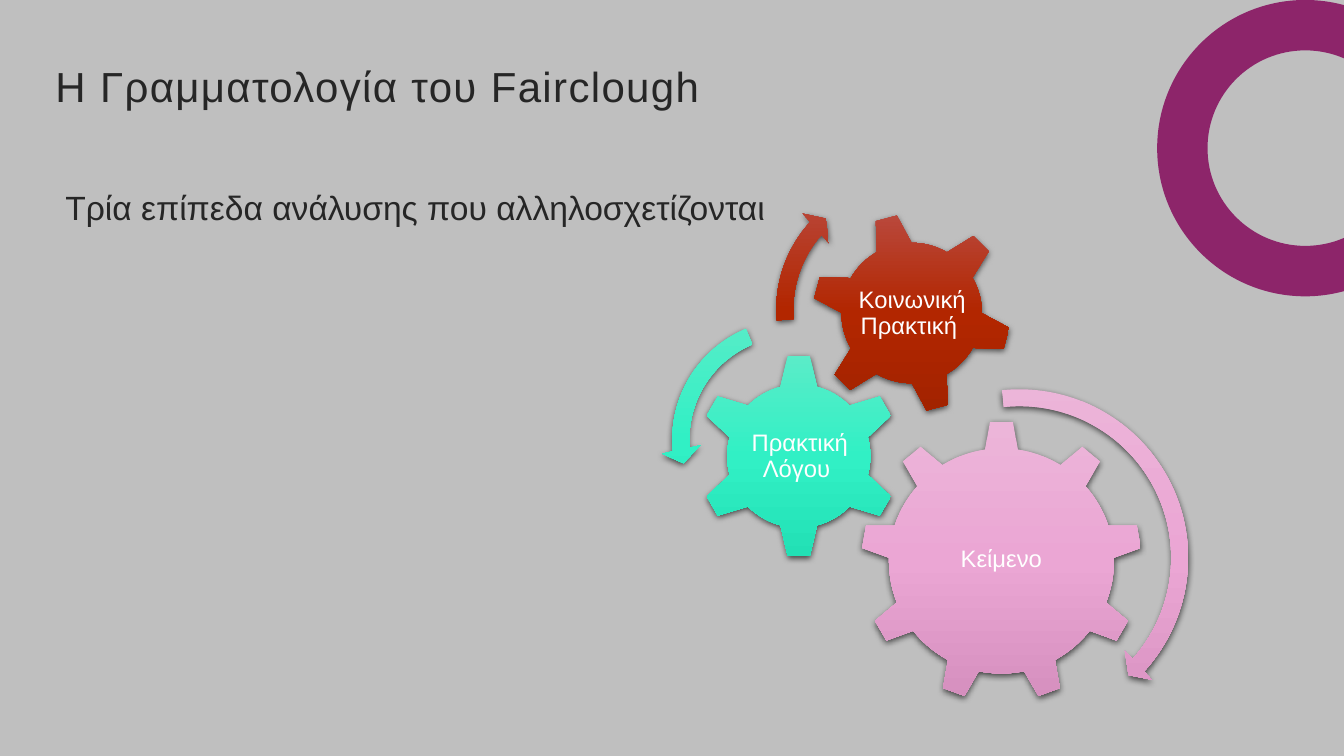
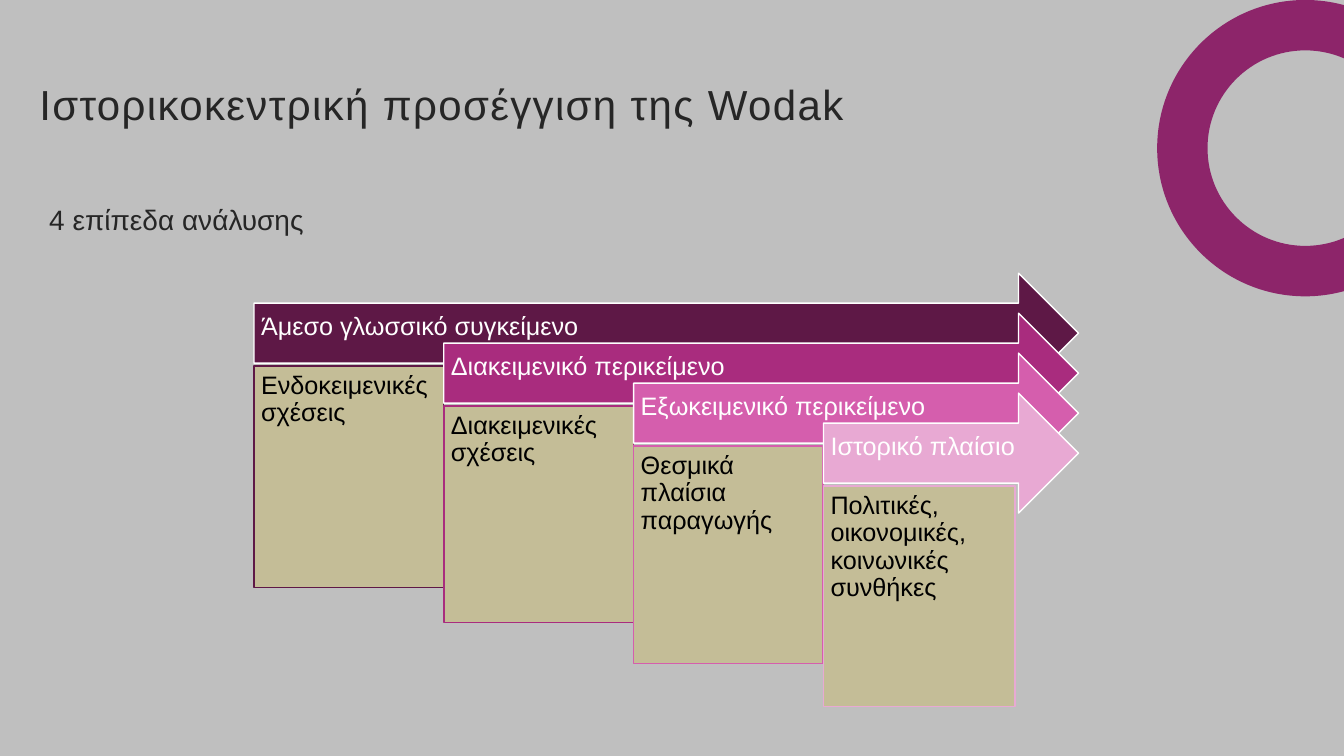
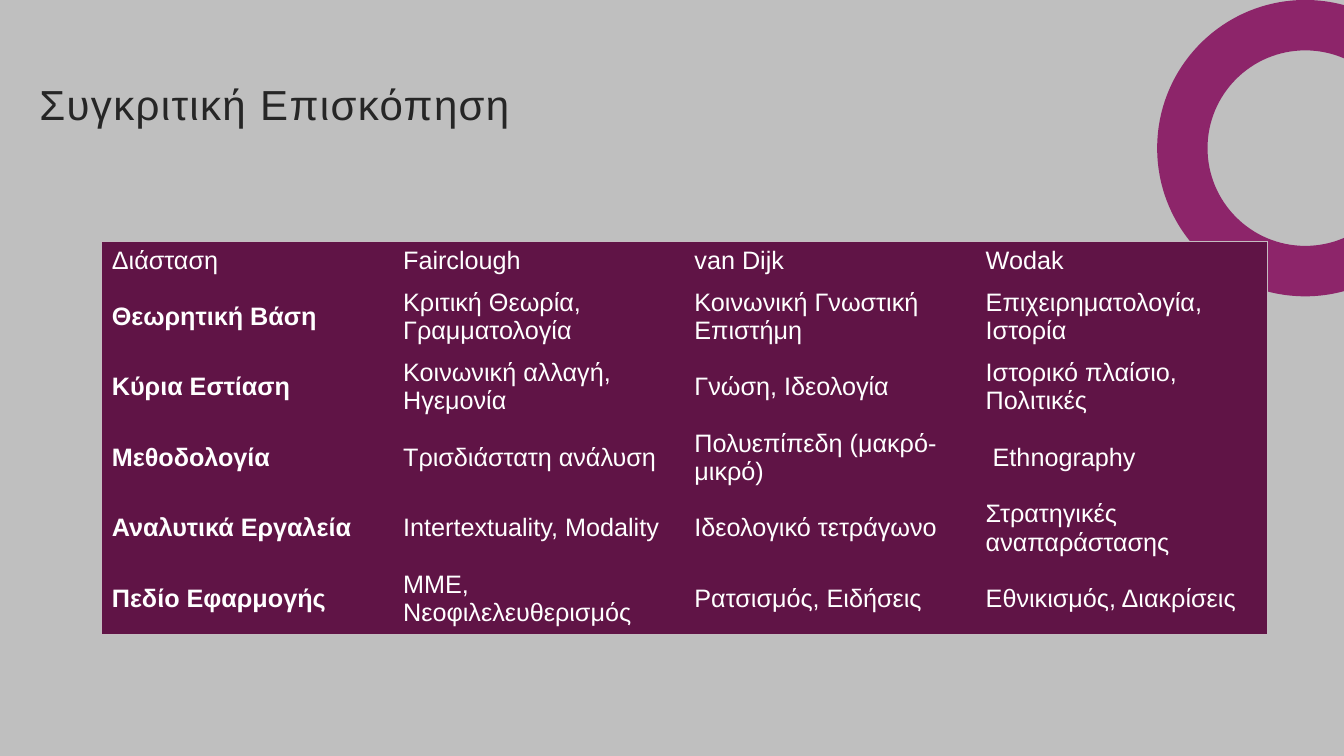
from copy import deepcopy
from itertools import pairwise
from math import acos, cos, pi, sin, tan

from lxml import etree
from pptx import Presentation
from pptx.dml.color import RGBColor
from pptx.enum.shapes import MSO_SHAPE
from pptx.enum.text import MSO_ANCHOR, MSO_AUTO_SIZE, PP_ALIGN
from pptx.oxml import parse_xml
from pptx.oxml.ns import nsdecls, qn
from pptx.util import Inches, Pt

FONT = "Arial"
SLIDE_WIDTH, SLIDE_HEIGHT = 40 / 3, 7.5
BACKGROUND, RING, INK, WHITE, BLACK = "BFBFBF", "8D256A", "262626", "FFFFFF", "000000"
SAND, TABLE_FILL, TABLE_EDGE = "C4BD97", "601446", "C5BDC1"
PINK = ("ECB5D9", "EBA6D4", "D58FBE")
MINT = ("5BECC8", "31F0C5", "22E0B5")
RUST = ("BB514B", "B22600", "9E2200")

GEARS = [
    (MSO_SHAPE.GEAR_9, (8.54, 4.17, 2.79, 2.79), 0, PINK, "Κείμενο", (9.1, 4.83, 1.67, 1.44)),
    (MSO_SHAPE.GEAR_6, (6.91, 3.51, 2.03, 2.03), 0, MINT, "Πρακτική Λόγου ", (7.43, 4.03, 1.01, 1)),
    (MSO_SHAPE.GEAR_6, (8.05, 2.11, 1.99, 1.99), 345, RUST, "Κοινωνική Πρακτική ", (8.49, 2.55, 1.12, 1.12)),
]
TURNS = [
    (MSO_SHAPE.CIRCULAR_ARROW, (8.33, 3.75, 3.57, 3.57), PINK, (0.047, 2.99, 25.259, 158.404, 0.055)),
    (MSO_SHAPE.LEFT_CIRCULAR_ARROW, (6.56, 3.06, 2.6, 2.6), MINT, (0.065, 4.3, 104.891, 148.378, 0.075)),
    (MSO_SHAPE.CIRCULAR_ARROW, (7.59, 1.67, 2.8, 2.8), RUST, (0.06, 3.941, 133.138, 105.082, 0.07)),
]
LEVELS = [
    ("Άμεσο γλωσσικό συγκείμενο", "Ενδοκειμενικές σχέσεις", "5E1846", 1.88, 2.2),
    ("Διακειμενικό περικείμενο", "Διακειμενικές σχέσεις", "A92C7E", 1.88, 2.15),
    ("Εξωκειμενικό περικείμενο", "Θεσμικά πλαίσια παραγωγής", "D55EAD", 1.88, 2.16),
    ("Ιστορικό πλαίσιο", "Πολιτικές, οικονομικές, κοινωνικές συνθήκες", "E8A9D3", 1.9, 2.19),
]
COMPARISON = [
    ("Διάσταση", "Fairclough", "van Dijk", "Wodak"),
    ("Θεωρητική Βάση", "Κριτική Θεωρία, Γραμματολογία", "Κοινωνική Γνωστική Επιστήμη",
     "Επιχειρηματολογία, Ιστορία"),
    ("Κύρια Εστίαση", "Κοινωνική αλλαγή, Ηγεμονία", "Γνώση, Ιδεολογία", "Ιστορικό πλαίσιο, Πολιτικές"),
    ("Μεθοδολογία", "Τρισδιάστατη ανάλυση", "Πολυεπίπεδη (μακρό-μικρό)", " Ethnography"),
    ("Αναλυτικά Εργαλεία", "Intertextuality, Modality", "Ιδεολογικό τετράγωνο", "Στρατηγικές αναπαράστασης"),
    ("Πεδίο Εφαρμογής", "ΜΜΕ, Νεοφιλελευθερισμός", "Ρατσισμός, Ειδήσεις", "Εθνικισμός, Διακρίσεις"),
]


def colour(value):
    return RGBColor.from_string(value)


def assign(target, values):
    for name, value in values.items():
        setattr(target, name, value)


def box(at):
    return [Inches(length) for length in at]


def write(frame, text, size, ink, insets=(0.1, 0.05, 0.1, 0.05), anchor=MSO_ANCHOR.TOP,
          align=PP_ALIGN.LEFT, spacing=0.9, bold=False):
    sides = ("margin_left", "margin_top", "margin_right", "margin_bottom")
    assign(frame, dict(zip(sides, box(insets))))
    assign(frame, {"word_wrap": True, "vertical_anchor": anchor, "text": text})
    paragraph = frame.paragraphs[0]
    assign(paragraph, {"alignment": align, "line_spacing": spacing})
    font = paragraph.runs[0].font
    assign(font, {"name": FONT, "size": Pt(size), "bold": bold})
    font.color.rgb = colour(ink)
    return paragraph


def add_text(slide, at, *words, **style):
    write(slide.shapes.add_textbox(*box(at)).text_frame, *words, **style)


def add_slide(presentation, title, at, top_inset=0):
    slide = presentation.slides.add_slide(presentation.slide_layouts[5])
    placeholder = slide.shapes.title
    assign(placeholder, dict(zip(("left", "top", "width", "height"), box(at))))
    placeholder.text_frame.auto_size = MSO_AUTO_SIZE.NONE
    paragraph = write(placeholder.text_frame, title, 30, INK, insets=(0, top_inset, 0, 0))
    paragraph.runs[0].font._element.set("spc", "100")
    return slide


def add_flat(slide, kind, at, fill, line):
    shape = slide.shapes.add_shape(kind, *box(at))
    shape.shadow.inherit = False
    shape.fill.solid()
    shape.fill.fore_color.rgb = colour(fill)
    shape.line.color.rgb = colour(line)
    shape.line.width = Pt(1)
    return shape


def add_glossy(slide, kind, at, colours):
    shape = slide.shapes.add_shape(kind, *box(at))
    shape.line.fill.background()
    shape.fill.gradient()
    shape.fill.gradient_angle = 270
    properties = shape._element.spPr
    properties.find(qn("a:gradFill")).set("rotWithShape", "0")
    stop_list = properties.find(".//" + qn("a:gsLst"))
    stop_list.insert(1, deepcopy(stop_list[0]))
    for stop, value, position in zip(shape.fill.gradient_stops, colours, (0, 0.5, 1)):
        stop.color.rgb = colour(value)
        stop.position = position
    shape.shadow.inherit = False
    properties.find(qn("a:effectLst")).append(parse_xml(
        f'<a:outerShdw {nsdecls("a")} blurRad="{Pt(4.5)}" dist="{Pt(1.5)}" dir="5400000" rotWithShape="0">'
        f'<a:srgbClr val="{BLACK}"><a:alpha val="63000"/></a:srgbClr></a:outerShdw>'))
    return shape


def set_border(cell, side):
    line = etree.SubElement(cell._tc.get_or_add_tcPr(), qn("a:ln" + side), w=str(Pt(0.5)))
    etree.SubElement(etree.SubElement(line, qn("a:solidFill")), qn("a:srgbClr"), val=TABLE_EDGE)


def arc_angles(radius, centre_x):
    start = acos((SLIDE_WIDTH - centre_x) / radius)
    return [start, pi / 2, pi, 3 * pi / 2, 2 * pi - start]


def curve_segment(segment, radius, centre, start, end):
    reach = 4 / 3 * tan((end - start) / 4)
    corners = [(cos(start) - reach * sin(start), sin(start) + reach * cos(start)),
               (cos(end) + reach * sin(end), sin(end) - reach * cos(end)),
               (cos(end), sin(end))]
    segment.tag = qn("a:cubicBezTo")
    segment.clear()
    for x, y in corners:
        etree.SubElement(segment, qn("a:pt"), x=str(Inches(centre[0] + radius * x)),
                         y=str(Inches(centre[1] + radius * y)))


def add_ring(slide, outer=1.47, inner=0.97, centre_x=12.95, centre_y=1.47):
    arcs = [(outer, arc_angles(outer, centre_x)), (inner, arc_angles(inner, centre_x)[::-1])]
    points = [(Inches(centre_x + radius * cos(angle)), Inches(centre_y + radius * sin(angle)))
              for radius, angles in arcs for angle in angles]
    builder = slide.shapes.build_freeform(*points[0], scale=1.0)
    builder.add_line_segments(points[1:], close=True)
    ring = builder.convert_to_shape()
    segments = list(ring._element.iter(qn("a:lnTo")))
    local_centre = (outer, centre_y)
    for offset, (radius, angles) in zip((0, 5), arcs):
        for segment, (start, end) in zip(segments[offset:], pairwise(angles)):
            replacement = etree.Element(qn("a:cubicBezTo"))
            curve_segment(replacement, radius, local_centre, start, end)
            segment.getparent().replace(segment, replacement)
    ring.shadow.inherit = False
    ring.fill.solid()
    ring.fill.fore_color.rgb = colour(RING)
    ring.line.fill.background()
    return ring


def decorate_layout(slide):
    layout = slide.slide_layout
    layout.background.fill.solid()
    layout.background.fill.fore_color.rgb = colour(BACKGROUND)
    layout.shapes._spTree.append(add_ring(slide)._element)


def build_gears(presentation):
    slide = add_slide(presentation, "Η Γραμματολογία του Fairclough", (0.55, 0.21, 7, 2), 0.45)
    decorate_layout(slide)
    add_text(slide, (0.55, 1.81, 8.75, 1.26), "Τρία επίπεδα ανάλυσης που αλληλοσχετίζονται", 24, INK,
             align=PP_ALIGN.JUSTIFY, spacing=1.0)
    for kind, at, rotation, colours, label, label_at in GEARS:
        add_glossy(slide, kind, at, colours).rotation = rotation
        add_text(slide, label_at, label, 17, WHITE, insets=(0.02,) * 4,
                 anchor=MSO_ANCHOR.MIDDLE, align=PP_ALIGN.CENTER)
    for kind, at, colours, adjustments in TURNS:
        turn = add_glossy(slide, kind, at, colours)
        for index, value in enumerate(adjustments):
            turn.adjustments[index] = value


def build_levels(presentation):
    slide = add_slide(presentation, "Ιστορικοκεντρική προσέγγιση της Wodak", (0.39, 0.84, 10.3, 0.74))
    add_text(slide, (0.39, 2, 8.75, 1.26), "4 επίπεδα ανάλυσης", 20, INK)
    first_left, last_left, right = 2.52, 8.17, 10.7
    first_top, last_top = 2.71, 3.9
    gaps = len(LEVELS) - 1
    for index, (heading, detail, shade, width, height) in enumerate(LEVELS):
        left = first_left + (last_left - first_left) * index / gaps
        top = first_top + (last_top - first_top) * index / gaps
        arrow = add_flat(slide, MSO_SHAPE.RIGHT_ARROW, (left, top, right - left, 1.19), shade, WHITE)
        write(arrow.text_frame, heading, 18, WHITE, insets=(0.07, 0.07, 0.28, 0.19), anchor=MSO_ANCHOR.MIDDLE)
        panel = add_flat(slide, MSO_SHAPE.RECTANGLE, (left, top + 0.92, width, height), SAND, shade)
        write(panel.text_frame, detail, 18, BLACK, insets=(0.07,) * 4)


def build_comparison(presentation):
    slide = add_slide(presentation, "Συγκριτική Επισκόπηση", (0.39, 0.84, 10.3, 0.74))
    last_row, last_column = len(COMPARISON) - 1, len(COMPARISON[0]) - 1
    table = slide.shapes.add_table(last_row + 1, last_column + 1, *box((1.01, 2.39, 11.56, 3.9))).table
    assign(table, {"first_row": False, "horz_banding": False})
    table._tbl.tblPr.find(qn("a:tableStyleId")).text = "{2D5ABB26-0587-4C30-8999-92F81FD0307C}"
    for row, texts in enumerate(COMPARISON):
        table.rows[row].height = Inches(0.7 if row else 0.4)
        for column, text in enumerate(texts):
            cell = table.cell(row, column)
            edges = {"L": column == 0, "R": column == last_column, "T": row == 0, "B": row == last_row}
            for side, outer in edges.items():
                if outer:
                    set_border(cell, side)
            cell.fill.solid()
            cell.fill.fore_color.rgb = colour(TABLE_FILL)
            write(cell.text_frame, text, 18, WHITE, spacing=1.0, bold=row > 0 and column == 0)
            cell.vertical_anchor = MSO_ANCHOR.MIDDLE


def main():
    presentation = Presentation()
    assign(presentation, {"slide_width": Inches(SLIDE_WIDTH), "slide_height": Inches(SLIDE_HEIGHT)})
    for build in (build_gears, build_levels, build_comparison):
        build(presentation)
    presentation.save("out.pptx")


if __name__ == "__main__":
    main()
